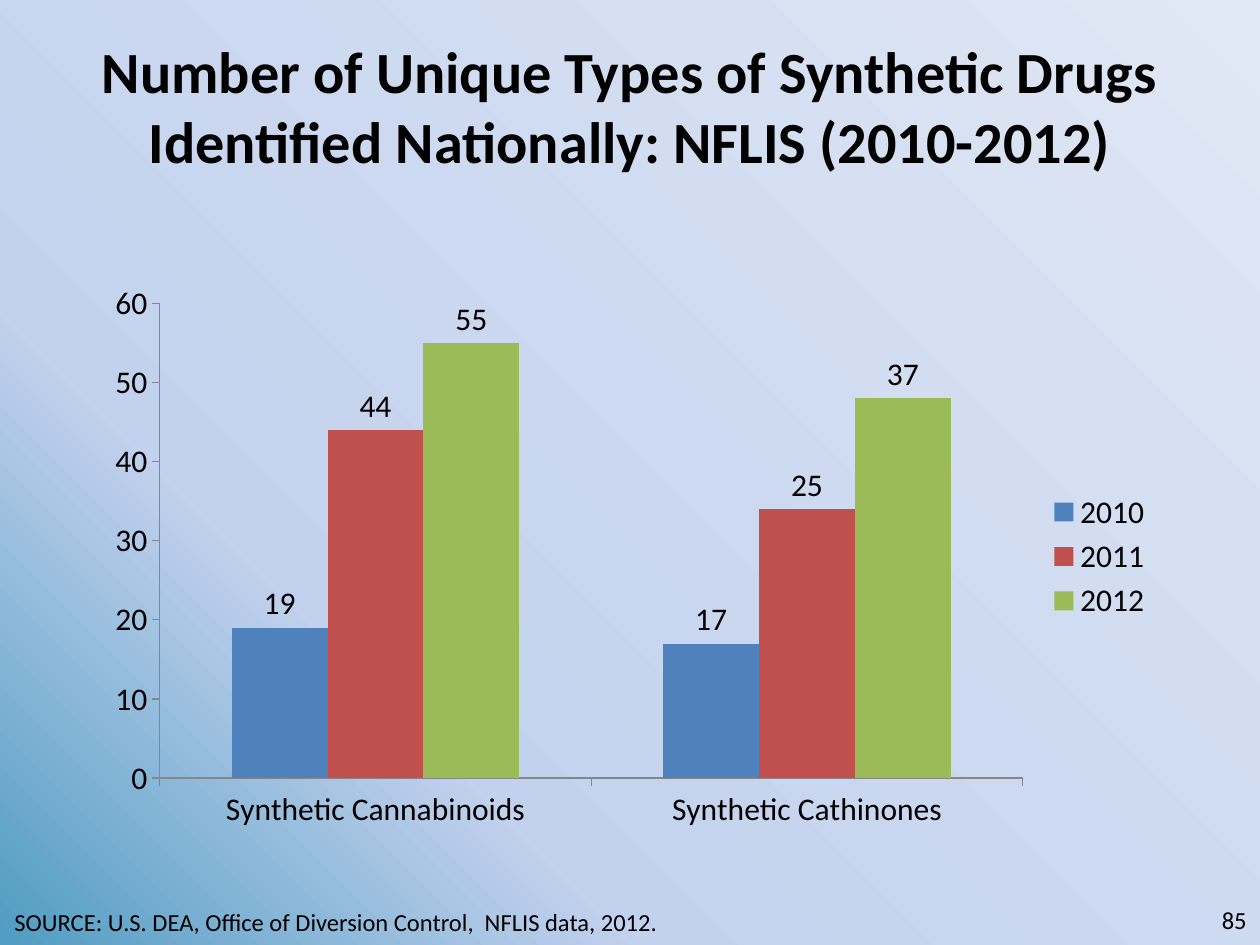
from lxml import etree
from pptx import Presentation
from pptx.chart.data import CategoryChartData
from pptx.dml.color import RGBColor
from pptx.enum.chart import (XL_CHART_TYPE, XL_LABEL_POSITION as LABEL_POS,
                             XL_LEGEND_POSITION as LEGEND_POS, XL_TICK_MARK as TICK)
from pptx.enum.text import MSO_ANCHOR as ANCHOR, PP_ALIGN as ALIGN
from pptx.oxml import parse_xml
from pptx.util import Pt

PX = 914400 // 126
FONT = "Calibri"
BLACK = "000000"
AXIS_GREY = "868686"
NS = "http://schemas.openxmlformats.org/drawingml/2006/main"
BACKGROUND = [(0, "509CC2"), (29, "C2D1ED"), (100, "E1E8F5")]
CATEGORIES = ["Synthetic Cannabinoids", "Synthetic Cathinones"]
SERIES = [("2010", (19, 17), "4F81BD"),
          ("2011", (44, 34), "C0504D"),
          ("2012", (55, 48), "9BBB59")]
# Labels whose wording differs from the bar height: (series, category) -> text
LABEL_TEXTS = {("2011", 1): "25", ("2012", 1): "37"}


def px(*lengths):
    return [n * PX for n in lengths]


def rgb(color):
    return RGBColor.from_string(color)


def set_font(font, size, color=BLACK, bold=False):
    font.name = FONT
    font.size = Pt(size)
    font.bold = bold
    font.color.rgb = rgb(color)


def set_background(slide, stops):
    """Fill the slide with a gradient spreading from the bottom left corner."""
    fill = slide.background.fill
    fill.gradient()
    grad = slide.background._cSld.find(f".//{{{NS}}}gradFill")
    stop_xml = "".join(f'<a:gs pos="{pos * 1000}"><a:srgbClr val="{color}"/></a:gs>'
                       for pos, color in stops)
    new = parse_xml(f'<a:gradFill xmlns:a="{NS}" rotWithShape="1"><a:gsLst>{stop_xml}</a:gsLst>'
                    '<a:path path="circle"><a:fillToRect t="100000" r="100000"/></a:path>'
                    '</a:gradFill>')
    grad.getparent().replace(grad, new)


def add_text(slide, box, text, size, align=ALIGN.LEFT, anchor=ANCHOR.TOP, bold=False):
    tf = slide.shapes.add_textbox(*px(*box)).text_frame
    tf.word_wrap = True
    tf.vertical_anchor = anchor
    p = tf.paragraphs[0]
    p.alignment = align
    r = p.add_run()
    r.text = text
    set_font(r.font, size, bold=bold)


def style_axis(axis):
    axis.has_major_gridlines = False
    axis.major_tick_mark = TICK.OUTSIDE
    axis.minor_tick_mark = TICK.NONE
    axis.format.line.color.rgb = rgb(AXIS_GREY)
    axis.format.line.width = Pt(0.75)


def style_series(series, color):
    series.format.fill.solid()
    series.format.fill.fore_color.rgb = rgb(color)
    series.invert_if_negative = False
    labels = series.data_labels
    labels.show_value = True
    labels.position = LABEL_POS.OUTSIDE_END
    set_font(labels.font, 18)


def set_label_text(series, index, text):
    label = series.points[index].data_label
    r = label.text_frame.paragraphs[0].add_run()
    r.text = text
    set_font(r.font, 18)
    label.position = LABEL_POS.OUTSIDE_END


def add_column_chart(slide, box):
    data = CategoryChartData()
    data.categories = CATEGORIES
    for name, values, _ in SERIES:
        data.add_series(name, values)
    chart = slide.shapes.add_chart(XL_CHART_TYPE.COLUMN_CLUSTERED, *px(*box), data).chart
    set_font(chart.font, 18)
    chart.has_title = False
    chart.has_legend = True
    chart.legend.position = LEGEND_POS.RIGHT
    chart.legend.include_in_layout = False
    style_axis(chart.category_axis)
    style_axis(chart.value_axis)
    chart.value_axis.minimum_scale = 0
    chart.value_axis.maximum_scale = 60
    chart.value_axis.major_unit = 10
    plot = chart.plots[0]
    plot.gap_width = 150
    plot.overlap = 0
    plot.vary_by_categories = False
    for series, (_, _, color) in zip(plot.series, SERIES):
        style_series(series, color)
        for (name, index), text in LABEL_TEXTS.items():
            if name == series.name:
                set_label_text(series, index, text)


def main():
    prs = Presentation()
    prs.slide_width, prs.slide_height = px(1260, 945)
    slide = prs.slides.add_slide(prs.slide_layouts[6])
    set_background(slide, BACKGROUND)
    add_text(slide, (63, 27, 1134, 157),
             "Number of Unique Types of Synthetic Drugs Identified Nationally: NFLIS (2010-2012)",
             33.3, ALIGN.CENTER, ANCHOR.MIDDLE, bold=True)
    add_column_chart(slide, (94, 273, 1071, 567))
    add_text(slide, (2, 901, 690, 44),
             "SOURCE: U.S. DEA, Office of Diversion Control,  NFLIS data, 2012.", 14)
    add_text(slide, (965, 895, 294, 50), "85", 14, ALIGN.RIGHT, ANCHOR.MIDDLE)
    prs.save("out.pptx")


if __name__ == "__main__":
    main()
